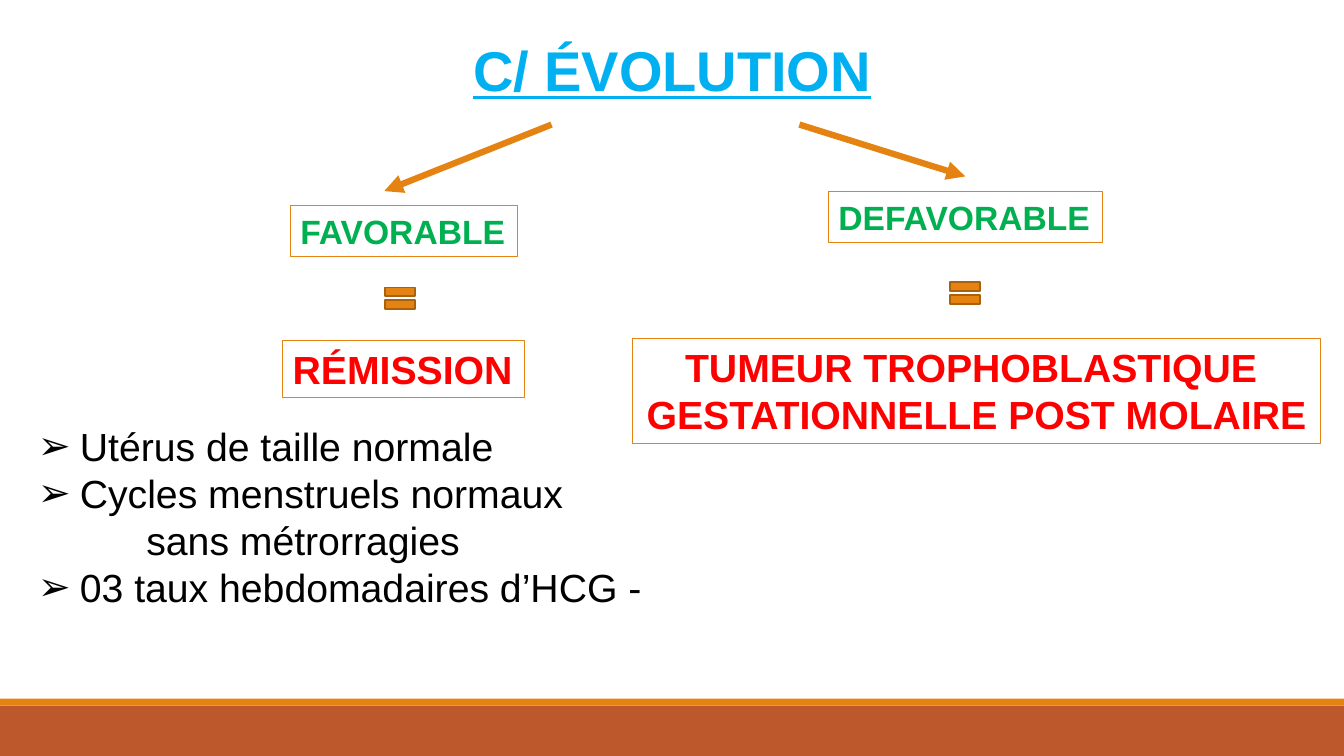
from lxml.etree import SubElement
from pptx import Presentation
from pptx.dml.color import RGBColor
from pptx.enum.shapes import MSO_CONNECTOR, MSO_SHAPE
from pptx.enum.text import MSO_ANCHOR, PP_ALIGN
from pptx.oxml.ns import qn
from pptx.util import Pt

ORANGE, BROWN, RUST = "E48312", "A9610D", "BD582C"
BLUE, GREEN, RED, BLACK = "00B0F0", "00B050", "FF0000", "000000"


def rgb(value):
    return RGBColor.from_string(value)


class EvolutionSlide:
    font_name = "Arial"

    def __init__(self, presentation):
        self.slide = presentation.slides.add_slide(presentation.slide_layouts[6])

    def block(self, preset, left, top, width, height, fill=None, line=None, weight=0.75):
        shape = self.slide.shapes.add_shape(
            preset, Pt(left), Pt(top), Pt(width), Pt(height))
        shape.shadow.inherit = False
        if fill:
            shape.fill.solid()
            shape.fill.fore_color.rgb = rgb(fill)
        else:
            shape.fill.background()
        if line:
            shape.line.color.rgb = rgb(line)
            shape.line.width = Pt(weight)
        else:
            shape.line.fill.background()
        return shape

    def set_text(self, shape, lines, size, color, align=PP_ALIGN.LEFT, wrap=False, **font):
        frame = shape.text_frame
        frame.word_wrap = wrap
        frame.vertical_anchor = MSO_ANCHOR.TOP
        frame.text = "\n".join(lines)
        style = {"name": self.font_name, "size": Pt(size), **font}
        for paragraph in frame.paragraphs:
            paragraph.alignment = align
            for run in paragraph.runs:
                for attribute, value in style.items():
                    setattr(run.font, attribute, value)
                run.font.color.rgb = rgb(color)
        return frame

    def text(self, left, top, width, height, lines, size, color, **style):
        box = self.slide.shapes.add_textbox(Pt(left), Pt(top), Pt(width), Pt(height))
        return self.set_text(box, lines, size, color, wrap=True, **style)

    def label(self, left, top, width, height, lines, size, color, align=PP_ALIGN.LEFT):
        frame = self.block(MSO_SHAPE.RECTANGLE, left, top, width, height, line=ORANGE)
        self.set_text(frame, lines, size, color, align, bold=True)

    def arrow(self, *ends):
        connector = self.slide.shapes.add_connector(
            MSO_CONNECTOR.STRAIGHT, *(Pt(end) for end in ends))
        connector.line.color.rgb = rgb(ORANGE)
        connector.line.width = Pt(4.5)
        SubElement(connector.line._get_or_add_ln(), qn("a:tailEnd"), type="triangle")
        SubElement(connector._element.spPr, qn("a:effectLst"))

    def criteria(self, left, top, width, height, items):
        """Add (text, indent, bulleted) items as one list."""
        frame = self.text(left, top, width, height,
                          [words for words, _, _ in items], 28, BLACK)
        for paragraph, (_, indent, bulleted) in zip(frame.paragraphs, items):
            properties = paragraph._p.get_or_add_pPr()
            properties.set("marL", str(Pt(indent)))
            properties.set("indent", str(Pt(-30) if bulleted else 0))
            if bulleted:
                SubElement(properties, qn("a:buFont"), typeface=self.font_name)
                SubElement(properties, qn("a:buChar"), char="➢")
            else:
                SubElement(properties, qn("a:buNone"))


def main():
    presentation = Presentation()
    presentation.slide_width, presentation.slide_height = Pt(960), Pt(540)
    page = EvolutionSlide(presentation)

    page.block(MSO_SHAPE.RECTANGLE, 0, 504, 960, 36, RUST)
    page.block(MSO_SHAPE.RECTANGLE, 0, 499, 960, 5, ORANGE)
    page.text(120, 22, 720, 53, ["C/ ÉVOLUTION"], 40, BLUE,
              align=PP_ALIGN.CENTER, bold=True, underline=True)

    page.arrow(394, 89, 274.5, 136.5)
    page.arrow(571, 89, 689.5, 126)
    page.label(207.4, 147, 162, 36.4, ["FAVORABLE"], 24, GREEN)
    page.label(591.8, 137, 195.8, 36.4, ["DEFAVORABLE"], 24, GREEN)
    for left, top in ((271, 200), (674.5, 196.3)):
        page.block(MSO_SHAPE.MATH_EQUAL, left, top, 29.5, 26, ORANGE, BROWN, 1.25)
    page.label(202, 243, 173, 41.2, ["RÉMISSION"], 28, RED)
    page.criteria(20, 298, 507, 143, [
        ("Utérus de taille normale", 30, True),
        ("Cycles menstruels normaux", 30, True),
        ("sans métrorragies", 77.5, False),
        ("03 taux hebdomadaires d’HCG -", 30, True),
    ])
    page.label(452, 242, 491, 75, ["TUMEUR TROPHOBLASTIQUE ",
                                   "GESTATIONNELLE POST MOLAIRE"],
               28, RED, PP_ALIGN.CENTER)
    presentation.save("out.pptx")


if __name__ == "__main__":
    main()
